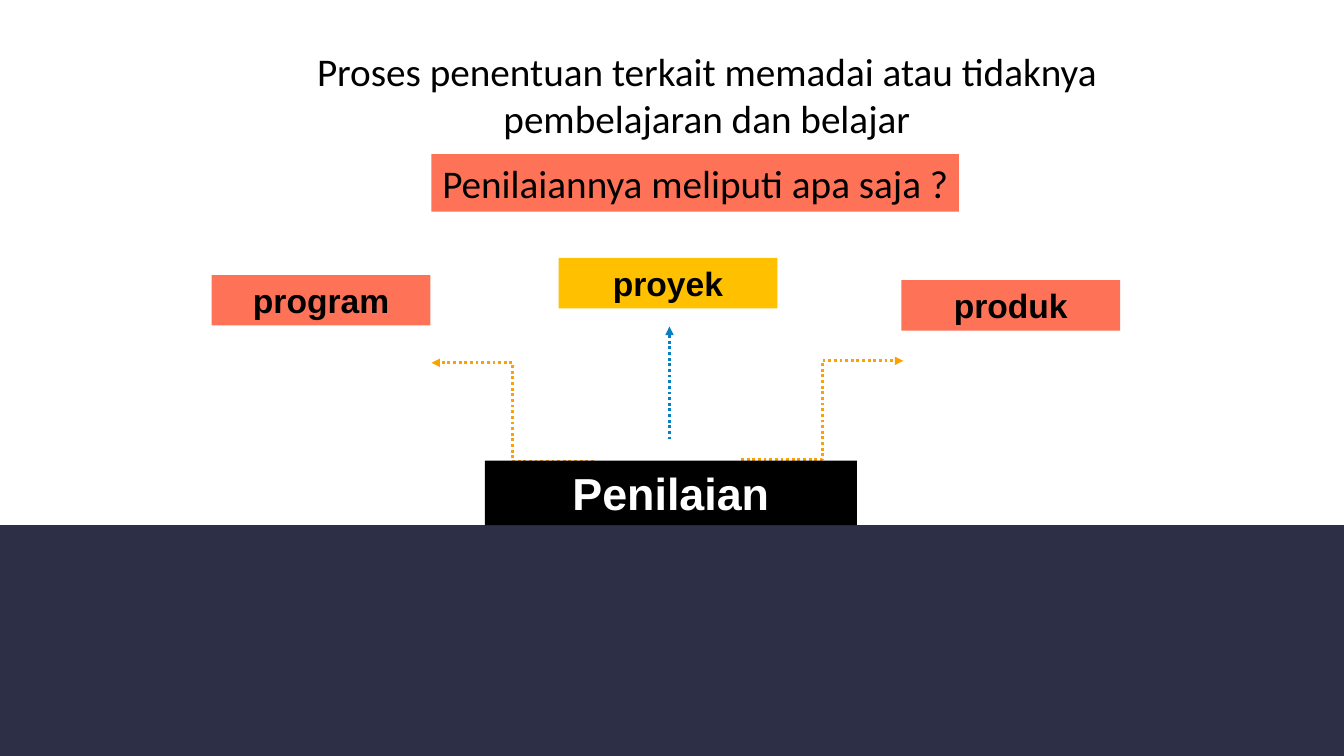
from pptx import Presentation
from pptx.dml.color import RGBColor
from pptx.enum.dml import MSO_LINE
from pptx.enum.shapes import MSO_CONNECTOR as CONNECTOR, MSO_SHAPE
from pptx.enum.text import MSO_AUTO_SIZE as AUTO_SIZE, PP_ALIGN
from pptx.oxml.ns import qn
from pptx.util import Inches, Pt
from lxml.etree import SubElement

COLORS = {
    "white": "FFFFFF",
    "black": "000000",
    "navy": "2C2F45",
    "coral": "FE7358",
    "yellow": "FFC000",
    "orange": "FBA200",
    "blue": "0680C3",
}


def rgb(color):
    return RGBColor.from_string(COLORS[color])


def add_band(slide, left, top, width, height, color):
    band = slide.shapes.add_shape(
        MSO_SHAPE.RECTANGLE, *map(Inches, (left, top, width, height)))
    band.shadow.inherit = False
    band.fill.solid()
    band.fill.fore_color.rgb = rgb(color)
    band.line.fill.background()


def add_label(slide, text, box, fill, size, font="Arial", bold=True, color="black"):
    label = slide.shapes.add_textbox(*map(Inches, box))
    label.fill.solid()
    label.fill.fore_color.rgb = rgb(fill)
    frame = label.text_frame
    frame.word_wrap = True
    frame.auto_size = AUTO_SIZE.SHAPE_TO_FIT_TEXT
    frame.text = text
    paragraph = frame.paragraphs[0]
    paragraph.alignment = PP_ALIGN.CENTER
    style = paragraph.runs[0].font
    style.name, style.size, style.bold = font, Pt(size), bold
    style.color.rgb = rgb(color)


def add_arrow(slide, kind, start, end, color):
    arrow = slide.shapes.add_connector(kind, *map(Inches, start + end))
    arrow.line.color.rgb = rgb(color)
    arrow.line.width = Pt(2)
    arrow.line.dash_style = MSO_LINE.ROUND_DOT
    properties = arrow._element.spPr
    SubElement(properties.find(qn("a:ln")), qn("a:tailEnd"), type="triangle")
    SubElement(properties, qn("a:effectLst"))


def main():
    deck = Presentation()
    deck.slide_width, deck.slide_height = Inches(13.33), Inches(7.5)
    slide = deck.slides.add_slide(deck.slide_layouts[6])

    # Side arrows and the dark base that the centre arrow rises above
    add_arrow(slide, CONNECTOR.ELBOW, (7.35, 4.56), (8.96, 3.58), "orange")
    add_arrow(slide, CONNECTOR.ELBOW, (5.89, 4.58), (4.28, 3.6), "orange")
    add_band(slide, 0, 5.21, 13.33, 2.29, "navy")
    add_arrow(slide, CONNECTOR.STRAIGHT, (6.64, 4.36), (6.64, 3.24), "blue")

    # Objects of assessment
    for text, left, top, fill in (
        ("proyek", 5.54, 2.56, "yellow"),
        ("program", 2.1, 2.73, "coral"),
        ("produk", 8.94, 2.78, "coral"),
    ):
        add_label(slide, text, (left, top, 2.17, 0.5), fill, 24)

    # Definition and question
    add_label(slide,
              "Proses penentuan terkait memadai atau tidaknya pembelajaran dan belajar",
              (2.86, 0.42, 8.3, 1.04), "white", 28, "Calibri", False)
    add_label(slide, "Penilaiannya meliputi apa saja ?",
              (4.28, 1.53, 5.23, 0.57), "coral", 28, "Calibri", False)

    # Topic
    add_label(slide, "Penilaian", (4.81, 4.57, 3.69, 0.64), "black", 32, color="white")

    deck.save("out.pptx")


if __name__ == "__main__":
    main()
